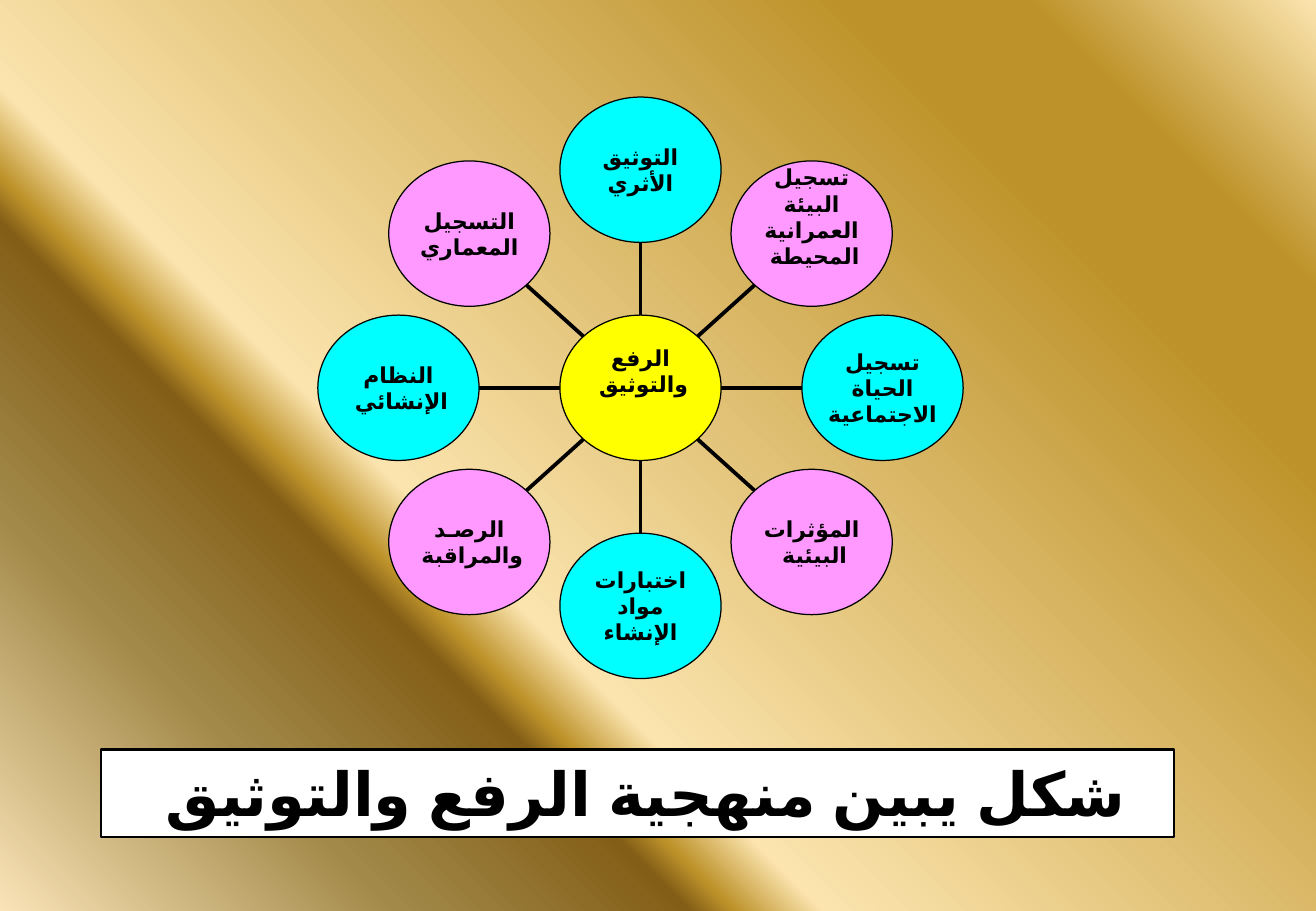
from math import cos, pi, sin

from lxml.etree import SubElement
from pptx import Presentation
from pptx.dml.color import RGBColor
from pptx.enum.lang import MSO_LANGUAGE_ID
from pptx.enum.shapes import MSO_CONNECTOR, MSO_SHAPE
from pptx.enum.text import MSO_ANCHOR, MSO_AUTO_SIZE, PP_ALIGN
from pptx.oxml.ns import qn
from pptx.util import Cm, Pt

FONT = "Arial"
COLORS = {
    "black": "000000", "white": "FFFFFF", "yellow": "FFFF00",
    "cyan": "00FFFF", "pink": "FF99FF",
}
# Background stops: percent and colour
STOPS = [
    (0, "FAE3B7"), (18, "A28949"), (31, "835E17"), (33, "BD922A"),
    (37, "FBE4AE"), (79, "BD922A"), (87, "BD922A"), (100, "FBE4AE"),
]

# Wheel, in cm: centre, ring radii and node size
MID_X, MID_Y = 13.39, 8.11
RING_X, RING_Y = 5.06, 4.56
NODE_W, NODE_H = 3.37, 3.04
LIFT = 0.71  # bottom inset that raises a label

HUB = "الرفع والتوثيق "
TOPICS = [  # clockwise from the top: label, bottom inset
    ("التوثيق الأثري", 0),
    ("تسجيل البيئة العمرانية المحيطة ", LIFT),
    ("تسجيل الحياة الاجتماعية ", 0),
    ("المؤثرات البيئية ", 0),
    ("اختبارات مواد الإنشاء", 0),
    ("الرصـد والمراقبة ", 0),
    ("النظام الإنشائي ", 0),
    ("التسجيل المعماري", 0),
]
TITLE = "شكل يبين منهجية الرفع والتوثيق "


def color(name):
    return RGBColor.from_string(COLORS[name])


def paint_back(slide):
    fill = slide.background.fill
    fill.gradient()
    fill.gradient_angle = 45
    stops = slide.element.find(".//" + qn("a:gsLst"))
    for old in list(stops):
        stops.remove(old)
    for place, tone in STOPS:
        stop = SubElement(stops, qn("a:gs"), pos=str(place * 1000))
        SubElement(stop, qn("a:srgbClr"), val=tone)


def add_label(shapes, kind, box, fill, weight, text, size):
    """Add a filled shape with centred right-to-left text."""
    shape = shapes.add_shape(kind, *[Cm(n) for n in box])
    shape.shadow.inherit = False
    shape.fill.solid()
    shape.fill.fore_color.rgb = color(fill)
    shape.line.color.rgb = color("black")
    shape.line.width = Pt(weight)
    frame = shape.text_frame
    frame.word_wrap = True
    frame.text = text
    para = frame.paragraphs[0]
    para.alignment = PP_ALIGN.CENTER
    para._p.get_or_add_pPr().set("rtl", "1")
    run = para.runs[0]
    run.font.size = Pt(size)
    run.font.bold = True
    run.font.color.rgb = color("black")
    run.font.name = FONT
    run.font.language_id = MSO_LANGUAGE_ID.ARABIC
    SubElement(run._r.get_or_add_rPr(), qn("a:cs"), typeface=FONT)
    return frame


def add_node(shapes, x, y, fill, text, lift):
    box = (x - NODE_W / 2, y - NODE_H / 2, NODE_W, NODE_H)
    frame = add_label(shapes, MSO_SHAPE.OVAL, box, fill, 0.75, text, 13)
    frame.vertical_anchor = MSO_ANCHOR.MIDDLE
    frame.margin_left = frame.margin_right = frame.margin_top = 0
    frame.margin_bottom = Cm(lift)


def add_spoke(shapes, start, end):
    ends = [Cm(n) for n in (*start, *end)]
    spoke = shapes.add_connector(MSO_CONNECTOR.STRAIGHT, *ends)
    spoke.line.color.rgb = color("black")
    spoke.line.width = Pt(2.25)
    SubElement(spoke._element.spPr, qn("a:effectLst"))


def add_wheel(slide):
    shapes = slide.shapes.add_group_shape().shapes
    for i, (text, lift) in enumerate(TOPICS):
        turn = i * 2 * pi / len(TOPICS)
        dx, dy = RING_X * sin(turn), -RING_Y * cos(turn)
        # The spoke fills the middle third of the ray
        start, end = [(MID_X + dx * k / 3, MID_Y + dy * k / 3) for k in (1, 2)]
        add_spoke(shapes, start, end)
        fill = "pink" if i % 2 else "cyan"
        add_node(shapes, MID_X + dx, MID_Y + dy, fill, text, lift)
    add_node(shapes, MID_X, MID_Y, "yellow", HUB, LIFT)


def add_title(slide):
    box = (2.11, 15.67, 22.43, 1.83)
    frame = add_label(slide.shapes, MSO_SHAPE.RECTANGLE, box, "white", 1.5, TITLE, 36)
    frame.vertical_anchor = MSO_ANCHOR.TOP
    frame.auto_size = MSO_AUTO_SIZE.SHAPE_TO_FIT_TEXT


def main():
    deck = Presentation()
    deck.slide_width, deck.slide_height = Cm(27.51), Cm(19.05)
    slide = deck.slides.add_slide(deck.slide_layouts[6])
    paint_back(slide)
    add_wheel(slide)
    add_title(slide)
    deck.save("out.pptx")


if __name__ == "__main__":
    main()
